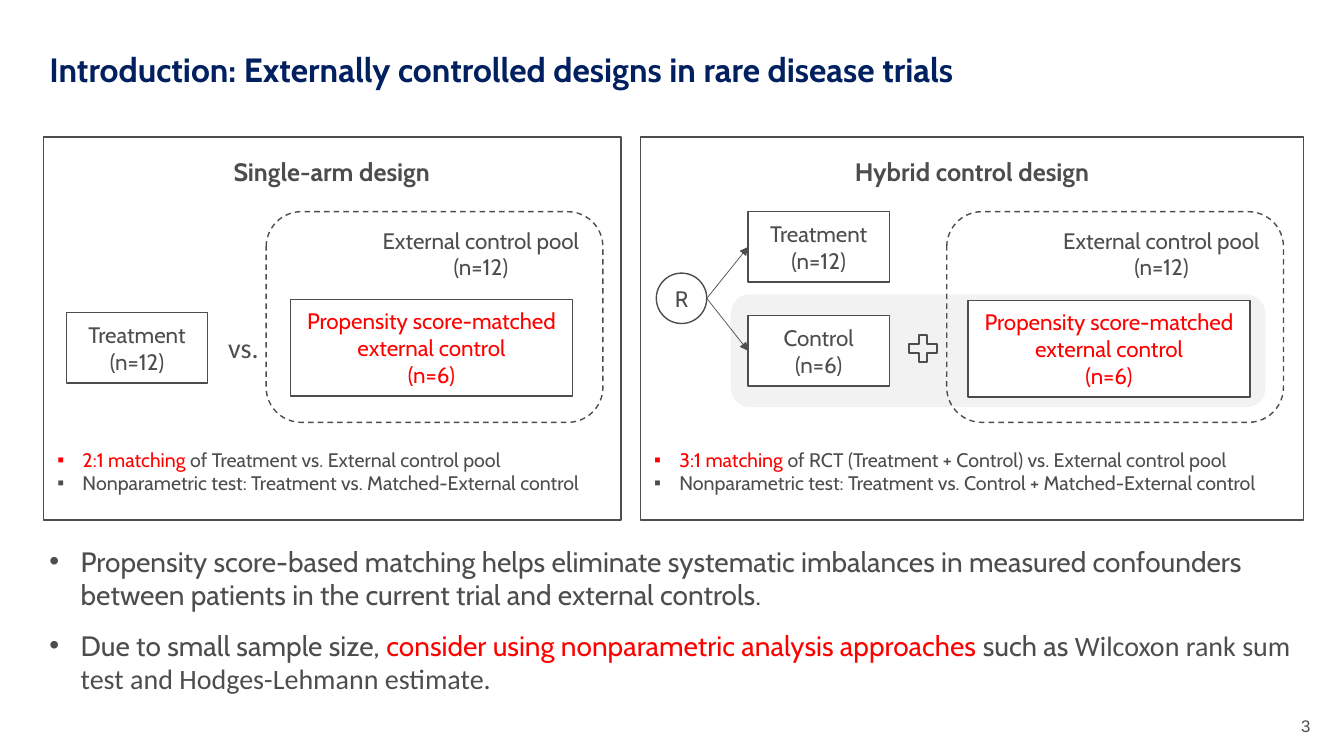
"""Build the slide on externally controlled designs in rare disease trials."""
from dataclasses import dataclass
from typing import Optional

from lxml.etree import SubElement
from pptx import Presentation
from pptx.dml.color import RGBColor
from pptx.enum.dml import MSO_LINE
from pptx.enum.shapes import MSO_CONNECTOR, MSO_SHAPE
from pptx.enum.text import MSO_ANCHOR, MSO_AUTO_SIZE, PP_ALIGN
from pptx.oxml.ns import qn
from pptx.util import Inches, Pt


@dataclass(frozen=True)
class Theme:
    """Colours, fonts and type sizes of the slide."""
    navy: str = "002060"
    gray: str = "4D4D4F"
    red: str = "FF0000"
    white: str = "FFFFFF"
    shade: str = "F2F2F2"
    font: str = "Cabin"
    plain_font: str = "Calibri"
    number_font: str = "Arial"
    title: int = 24
    body: int = 20
    heading: int = 18
    label: int = 16
    note: int = 14
    number: int = 12


THEME = Theme()


@dataclass(frozen=True)
class Piece:
    """A stretch of text in one format."""
    text: str
    size: int = THEME.label
    color: str = THEME.gray
    font: str = THEME.font
    bold: bool = False


@dataclass(frozen=True)
class Box:
    """A place on the slide, in inches."""
    left: float
    top: float
    width: float
    height: float


@dataclass(frozen=True)
class Design:
    """One framed trial design with its external control pool."""
    name: str
    frame: Box
    heading_left: float
    pool_left: float
    matched: Box
    notes: Box
    ratio: str
    matching: str
    test: str


DESIGNS = [
    Design("Single-arm design", Box(0.43, 1.36, 5.73, 3.8), 1.64, 2.64,
           Box(2.88, 2.97, 2.8, 0.96), Box(0.47, 4.39, 5.73, 0.57), "2:1 matching ",
           "of Treatment vs. External control pool",
           "Nonparametric test: Treatment vs. Matched-External control"),
    Design("Hybrid control design", Box(6.35, 1.36, 6.58, 3.8), 7.99, 9.39,
           Box(9.6, 2.98, 2.8, 0.96), Box(6.39, 4.39, 6.34, 0.57), "3:1 matching ",
           "of RCT (Treatment + Control) vs. External control pool",
           "Nonparametric test: Treatment vs. Control + Matched-External control"),
]

ARMS = [("Treatment", "(n=12)", 0.66, 3.1), ("Treatment", "(n=12)", 7.42, 2.1),
        ("Control", "(n=6)", 7.42, 3.13)]

MESSAGES = [
    [Piece("Propensity score-based matching helps eliminate systematic imbalances in measured "
           "confounders between patients in the current trial and external controls.", THEME.body)],
    [Piece("Due to small sample size, ", THEME.body),
     Piece("consider using nonparametric analysis approaches", THEME.body, THEME.red),
     Piece(" such as ", THEME.body),
     Piece("Wilcoxon rank sum test and Hodges-Lehmann estimate.", THEME.body,
           font=THEME.plain_font)],
]


def place(shape, box: Box) -> None:
    """Move and size a shape."""
    shape.left, shape.top = Inches(box.left), Inches(box.top)
    shape.width, shape.height = Inches(box.width), Inches(box.height)


def write(frame, paragraphs: list[list[Piece]], align=PP_ALIGN.CENTER) -> None:
    """Fill a text frame run by run."""
    frame.word_wrap = True
    frame.auto_size = MSO_AUTO_SIZE.NONE
    for index, pieces in enumerate(paragraphs):
        paragraph = frame.add_paragraph() if index else frame.paragraphs[0]
        paragraph.alignment = align
        for piece in pieces:
            run = paragraph.add_run()
            run.text = piece.text
            run.font.size, run.font.name, run.font.bold = Pt(piece.size), piece.font, piece.bold
            run.font.color.rgb = RGBColor.from_string(piece.color)


def add_bullets(frame, character: str, indent: float) -> None:
    """Give every paragraph a hanging bullet."""
    for paragraph in frame.paragraphs:
        properties = paragraph._p.get_or_add_pPr()
        properties.set("marL", str(Inches(indent)))
        properties.set("indent", str(-Inches(indent)))
        SubElement(properties, qn("a:buFont")).set("typeface", "Arial")
        SubElement(properties, qn("a:buChar")).set("char", character)


def add_text(slide, box: Box, paragraphs: list[list[Piece]], align=PP_ALIGN.CENTER):
    """Add a text box and return its frame."""
    shape = slide.shapes.add_textbox(0, 0, 0, 0)
    place(shape, box)
    write(shape.text_frame, paragraphs, align)
    return shape.text_frame


def add_box(slide, kind, box: Box, fill: Optional[str] = None, line: float = 1,
            paragraphs: Optional[list[list[Piece]]] = None):
    """Add a flat shape with an optional fill, line and text."""
    shape = slide.shapes.add_shape(kind, 0, 0, 0, 0)
    place(shape, box)
    shape.shadow.inherit = False
    if fill:
        shape.fill.solid()
        shape.fill.fore_color.rgb = RGBColor.from_string(fill)
    else:
        shape.fill.background()
    if line:
        shape.line.color.rgb = RGBColor.from_string(THEME.gray)
        shape.line.width = Pt(line)
    else:
        shape.line.fill.background()
    if paragraphs:
        shape.text_frame.vertical_anchor = MSO_ANCHOR.MIDDLE
        write(shape.text_frame, paragraphs)
    return shape


def add_arrow(slide, start: tuple[float, float], end: tuple[float, float]) -> None:
    """Add a thin straight arrow."""
    arrow = slide.shapes.add_connector(MSO_CONNECTOR.STRAIGHT, *map(Inches, start + end))
    arrow.line.color.rgb = RGBColor.from_string(THEME.gray)
    arrow.line.width = Pt(0.5)
    SubElement(arrow.line._get_or_add_ln(), qn("a:tailEnd")).set("type", "triangle")
    SubElement(arrow._element.spPr, qn("a:effectLst"))


def add_design(slide, design: Design) -> None:
    """Draw the frame, heading, control pool and notes of a design."""
    add_box(slide, MSO_SHAPE.ROUNDED_RECTANGLE, design.frame).adjustments[0] = 0
    add_text(slide, Box(design.heading_left, 1.5, 3.3, 0.4),
             [[Piece(design.name, THEME.heading, bold=True)]])
    matched_lines = ("Propensity score-matched", "external control", "(n=6)")
    add_box(slide, MSO_SHAPE.RECTANGLE, design.matched, THEME.white,
            paragraphs=[[Piece(text, color=THEME.red)] for text in matched_lines])
    add_text(slide, Box(design.pool_left + 0.95, 2.2, 2.36, 0.64),
             [[Piece("External control pool")], [Piece("(n=12)")]])
    pool = add_box(slide, MSO_SHAPE.ROUNDED_RECTANGLE, Box(design.pool_left, 2.1, 3.34, 2.09))
    pool.line.dash_style = MSO_LINE.DASH
    notes = add_text(slide, design.notes,
                     [[Piece(design.ratio, THEME.note, THEME.red),
                       Piece(design.matching, THEME.note)],
                      [Piece(design.test, THEME.note)]], PP_ALIGN.LEFT)
    add_bullets(notes, "▪", 0.25)


def main() -> None:
    """Build and save the presentation."""
    presentation = Presentation()
    presentation.slide_width, presentation.slide_height = Inches(13.33), Inches(7.5)
    slide = presentation.slides.add_slide(presentation.slide_layouts[1])
    title, body = slide.shapes.title, slide.placeholders[1]
    place(title, Box(0.39, 0.34, 12.02, 0.75))
    title.text_frame.vertical_anchor = MSO_ANCHOR.MIDDLE
    write(title.text_frame, [[Piece("Introduction: Externally controlled designs in rare disease "
                                    "trials", THEME.title, THEME.navy, bold=True)]], PP_ALIGN.LEFT)
    title.text_frame.paragraphs[0].line_spacing = 0.9
    place(body, Box(0.39, 5.35, 12.54, 1.69))
    write(body.text_frame, MESSAGES, PP_ALIGN.LEFT)
    for paragraph in body.text_frame.paragraphs:
        paragraph.line_spacing = Pt(24)
        paragraph.space_before, paragraph.space_after = Pt(0), Pt(12)
    add_bullets(body.text_frame, "•", 0.31)

    add_box(slide, MSO_SHAPE.ROUNDED_RECTANGLE, Box(7.25, 2.92, 5.3, 1.12), THEME.shade, 0)
    for design in DESIGNS:
        add_design(slide, design)
    for name, count, left, top in ARMS:
        add_box(slide, MSO_SHAPE.RECTANGLE, Box(left, top, 1.4, 0.7), THEME.white,
                paragraphs=[[Piece(name)], [Piece(count)]])
    add_text(slide, Box(2.11, 3.23, 0.61, 0.44),
             [[Piece("vs.", THEME.body, font=THEME.plain_font)]])
    add_box(slide, MSO_SHAPE.OVAL, Box(6.51, 2.71, 0.5, 0.5), paragraphs=[[Piece("R")]])
    for arm_middle in (2.45, 3.48):
        add_arrow(slide, (7.01, 2.96), (7.42, arm_middle))
    add_box(slide, MSO_SHAPE.MATH_PLUS, Box(8.97, 3.28, 0.37, 0.36), line=1.5)
    add_text(slide, Box(12.67, 7.05, 0.56, 0.35),
             [[Piece("3", THEME.number, font=THEME.number_font)]])
    presentation.save("out.pptx")


if __name__ == "__main__":
    main()
